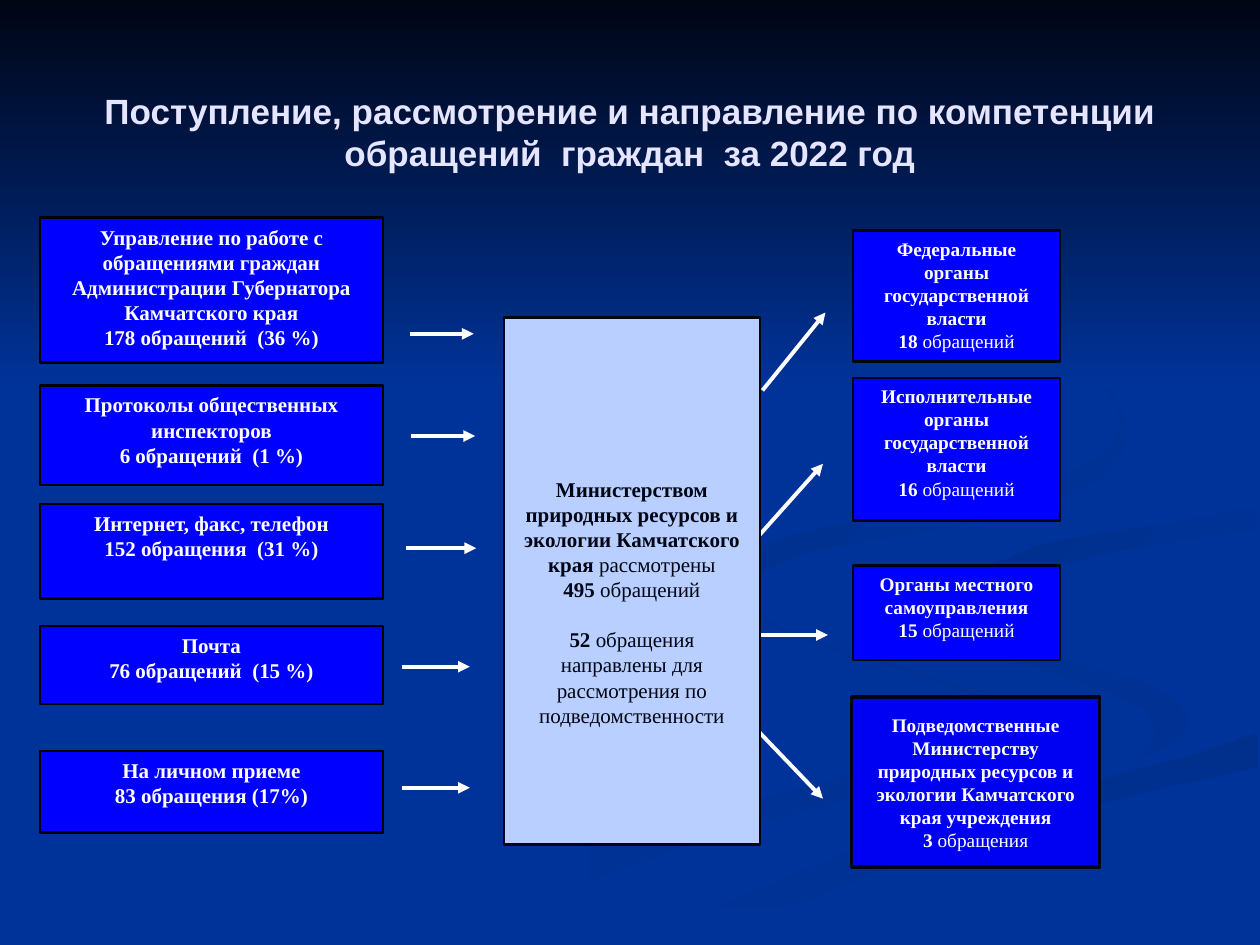
from lxml import etree
from pptx import Presentation
from pptx.dml.color import RGBColor
from pptx.enum.shapes import MSO_CONNECTOR, MSO_SHAPE
from pptx.enum.text import MSO_ANCHOR, PP_ALIGN
from pptx.oxml.ns import qn
from pptx.util import Cm, Pt

RECT, PROCESS = MSO_SHAPE.RECTANGLE, MSO_SHAPE.FLOWCHART_PROCESS
STRAIGHT = MSO_CONNECTOR.STRAIGHT
TOP, MIDDLE = MSO_ANCHOR.TOP, MSO_ANCHOR.MIDDLE
CENTER = PP_ALIGN.CENTER

COLORS = {
    "back": "003399", "night": "000514", "title": "E5E5FF", "white": "FFFFFF",
    "black": "000000", "box": "0000FF", "agency": "0000F2", "ministry": "B8CFFF",
    "shade": "003193", "shade_dark": "002F8C",
}

SWOOSHES = [
    (7.62, 11.66, 0, "back", "shade", [
        (1222, 239), (1130, 201), (970, 152), (828, 109), (729, 56), (699, 0), (691, 43),
        (767, 91), (899, 137), (1087, 193), (1209, 239), (1234, 272), (1204, 315),
        (1115, 353), (975, 391), (709, 457), (401, 546), (193, 630), (0, 737), (155, 737),
        (422, 612), (671, 523), (955, 444), (1158, 394), (1247, 351), (1270, 310), (1257, 274)]),
    (18.39, 11.79, 45, "back", "shade", [
        (556, 269), (523, 226), (460, 193), (320, 152), (173, 114), (86, 86), (23, 48),
        (0, 0), (15, 51), (56, 91), (145, 137), (290, 183), (396, 216), (465, 249),
        (493, 297), (465, 338), (432, 358), (511, 328), (551, 297)]),
    (12.78, 14.76, 90, "shade_dark", "back", [
        (0, 427), (173, 427), (246, 386), (371, 328), (556, 257), (808, 178), (1016, 124),
        (1257, 71), (1257, 0), (1135, 43), (925, 99), (663, 168), (404, 254), (168, 351),
        (41, 422)]),
    (19.84, 10.21, 45, "shade_dark", "back", [
        (0, 147), (13, 183), (64, 216), (114, 239), (71, 208), (61, 178), (89, 145),
        (157, 117), (246, 94), (394, 69), (551, 46), (551, 0), (386, 33), (213, 56),
        (102, 81), (25, 114)]),
    (14.66, 5.92, 45, "shade_dark", "back", [
        (269, 500), (411, 478), (531, 455), (630, 429), (706, 401), (759, 368), (792, 328),
        (805, 282), (795, 231), (770, 188), (704, 127), (620, 71), (470, 0), (579, 53),
        (683, 117), (744, 168), (782, 221), (792, 259), (785, 292), (759, 323), (699, 358),
        (612, 389), (472, 419), (251, 460), (122, 490), (51, 518), (8, 554), (0, 582),
        (18, 625), (114, 678), (61, 640), (41, 602), (61, 566), (119, 536), (183, 516)]),
]

SOURCES = [
    (0, 2.92, "Управление по работе с обращениями граждан Администрации Губернатора Камчатского края",
     "178 обращений  (36 %)", 7.45, 8.74, 2.34),
    (3.38, 2.01, "Протоколы общественных инспекторов", "6 обращений  (1 %)", 7.47, 8.77, 4.4),
    (5.77, 1.91, "Интернет, факс, телефон", "152 обращения  (31 %)", 7.37, 8.79, 6.66),
    (8.23, 1.57, "Почта", "76 обращений  (15 %)", 7.29, 8.66, 9.05),
    (10.75, 1.65, "На личном приеме", "83 обращения (17%)", 7.29, 8.66, 11.49),
]

RECIPIENTS = [
    (0, 2.64, "Федеральные органы государственной власти", "18 ", "обращений",
     (0.41, 3.22, 1.68, 1.65)),
    (2.97, 2.87, "Исполнительные органы государственной власти", "16 ", "обращений",
     (0.23, 6.27, 1.63, 4.7)),
    (6.75, 1.91, "Органы местного самоуправления", "15 ", "обращений",
     (0.33, 8.15, 1.73, 8.15)),
]


def rgb(name):
    return RGBColor.from_string(COLORS[name])


def write(shape, paragraphs, size, color="white", font="Times New Roman",
          anchor=TOP, margin_top=0.13, gap=None):
    frame = shape.text_frame
    frame.word_wrap = True
    frame.vertical_anchor = anchor
    frame.margin_top = Cm(margin_top)
    for index, parts in enumerate(paragraphs):
        paragraph = frame.add_paragraph() if index else frame.paragraphs[0]
        paragraph.alignment = CENTER
        if gap and index == len(paragraphs) - 1:
            paragraph.space_before = Pt(gap)
        for words, bold in parts:
            run = paragraph.add_run()
            run.text = words
            run.font.name = font
            run.font.size = Pt(size)
            run.font.bold = bold
            run.font.color.rgb = rgb(color)


def add_box(slide, box, fill="box", line="black", width=1.5, preset=RECT):
    shape = slide.shapes.add_shape(preset, *map(Cm, box))
    shape.shadow.inherit = False
    shape.fill.solid()
    shape.fill.fore_color.rgb = rgb(fill)
    shape.line.color.rgb = rgb(line)
    shape.line.width = Pt(width)
    return shape


def add_arrow(slide, left, top, ends):
    x1, y1, x2, y2 = ends
    arrow = slide.shapes.add_connector(
        STRAIGHT, Cm(left + x1), Cm(top + y1), Cm(left + x2), Cm(top + y2))
    arrow.line.color.rgb = rgb("white")
    arrow.line.width = Pt(2.25)
    etree.SubElement(arrow.line._get_or_add_ln(), qn("a:tailEnd"), type="triangle")
    etree.SubElement(arrow._element.spPr, qn("a:effectLst"))


def shade(shape, start, end, angle):
    shape.shadow.inherit = False
    shape.line.fill.background()
    shape.fill.gradient()
    shape.fill.gradient_angle = -angle % 360
    for stop, position, name in zip(shape.fill.gradient_stops, (0, 1), (start, end)):
        stop.position = position
        stop.color.rgb = rgb(name)


def add_backdrop(slide, box):
    left, top, width, height = box
    slide.background.fill.solid()
    slide.background.fill.fore_color.rgb = rgb("back")
    for x, y, angle, start, end, points in SWOOSHES:
        builder = slide.shapes.build_freeform(*points[0], scale=Cm(0.01))
        builder.add_line_segments(points[1:], close=True)
        shade(builder.convert_to_shape(Cm(left + x), Cm(top + y)), start, end, angle)
    sky = slide.shapes.add_shape(RECT, Cm(left), Cm(top), Cm(width), Cm(height * 0.41))
    shade(sky, "night", "back", 90)


def add_title(slide, box):
    title = slide.shapes.add_textbox(*map(Cm, box))
    words = "Поступление, рассмотрение и направление по компетенции обращений  граждан  за 2022 год"
    write(title, [[(words, True)]], 20, color="title", font="Arial", anchor=MIDDLE)


def add_sources(slide, box):
    left, top, width = box
    for y, height, channel, count, start, end, arrow_y in SOURCES:
        source = add_box(slide, (left, top + y, width, height))
        write(source, [[(channel, True)], [(count, True)]], 12)
        add_arrow(slide, left, top, (start, arrow_y, end, arrow_y))


def add_recipients(slide, box):
    left, top, width = box
    for y, height, body, count, noun, ends in RECIPIENTS:
        add_arrow(slide, left, top, ends)
        recipient = add_box(slide, (left + 2.24, top + y, width, height), line="night")
        write(recipient, [[(body, True)], [(count, True), (noun, False)]], 11)
    add_arrow(slide, left, top, (0, 9.75, 1.63, 11.45))
    agency = add_box(slide, (left + 2.21, top + 9.4, 5, 3.43), "agency", "night", 2, PROCESS)
    write(agency, [
        [("Подведомственные Министерству природных ресурсов и экологии "
          "Камчатского края учреждения", True)],
        [("3 ", True), ("обращения", False)],
    ], 11, anchor=MIDDLE)


def add_ministry(slide, box):
    ministry = add_box(slide, box, "ministry", "night")
    write(ministry, [
        [("Министерством природных ресурсов и экологии Камчатского края ", True),
         ("рассмотрены", False)],
        [("495 ", True), ("обращений", False)],
        [("52 ", True), ("обращения направлены для рассмотрения по подведомственности", False)],
    ], 12, color="night", margin_top=3.2, gap=14)


def main():
    deck = Presentation()
    deck.slide_width, deck.slide_height = Cm(25.4), Cm(19.05)
    slide = deck.slides.add_slide(deck.slide_layouts[6])
    add_backdrop(slide, (0, 0, 25.4, 19.05))
    add_title(slide, (1.27, 0.76, 22.86, 3.76))
    add_sources(slide, (0.81, 4.39, 6.91))
    add_recipients(slide, (14.96, 4.65, 4.17))
    add_ministry(slide, (10.16, 6.4, 5.16, 10.62))
    deck.save("out.pptx")


if __name__ == "__main__":
    main()
